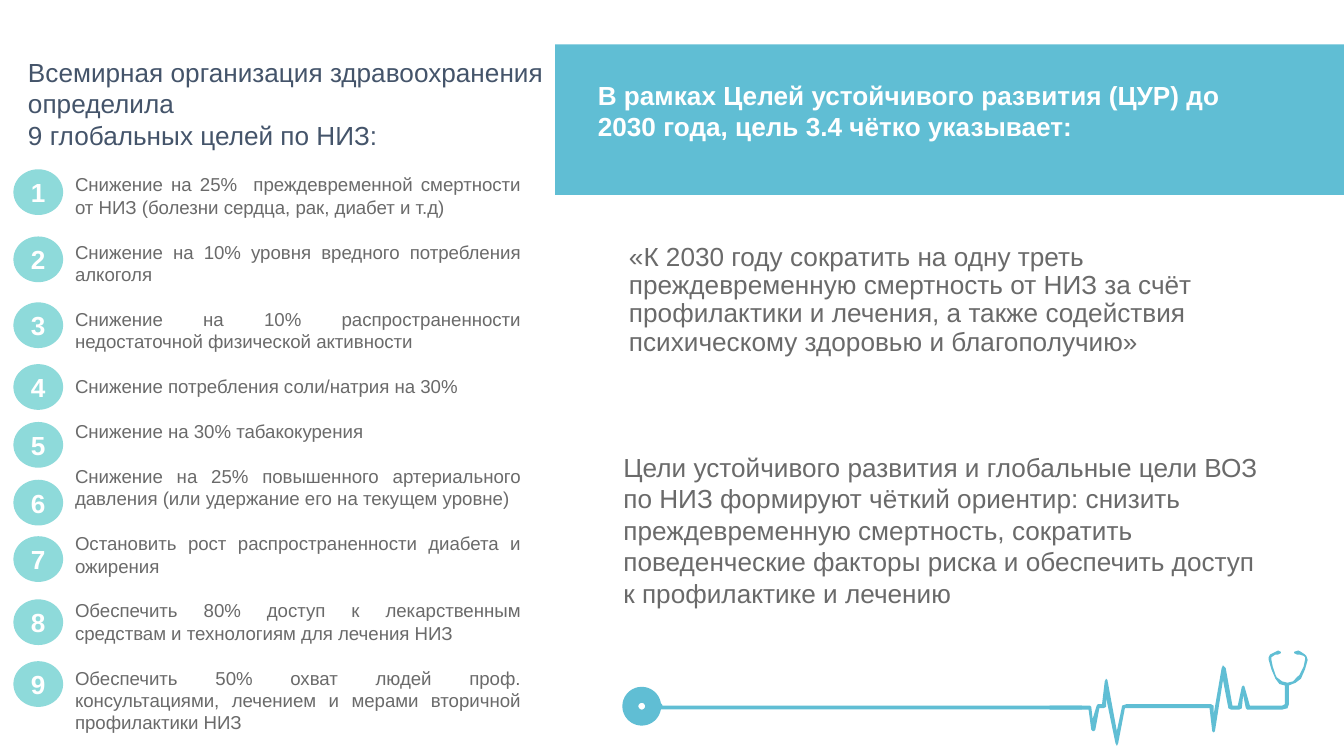
from pptx import Presentation
from pptx.dml.color import RGBColor
from pptx.enum.shapes import MSO_SHAPE
from pptx.enum.text import MSO_ANCHOR, MSO_AUTO_SIZE, PP_ALIGN
from pptx.util import Inches, Pt

RECT, ROUND, OVAL = MSO_SHAPE.RECTANGLE, MSO_SHAPE.ROUNDED_RECTANGLE, MSO_SHAPE.OVAL
LEFT, CENTER, JUSTIFY = PP_ALIGN.LEFT, PP_ALIGN.CENTER, PP_ALIGN.JUSTIFY
TOP, MIDDLE = MSO_ANCHOR.TOP, MSO_ANCHOR.MIDDLE
FIXED = MSO_AUTO_SIZE.NONE

PX = 9144  # EMU in one px, 100 px to the inch
FONT = "Arial"
COLORS = {
    "teal": "60BED4",
    "mint": "8EDADA",
    "navy": "44546A",
    "gray": "6A6A6A",
    "white": "FFFFFF",
}

HEADING = ["Всемирная организация здравоохранения определила",
           "9 глобальных целей по НИЗ:"]
GOALS = [
    "Снижение на 25%  преждевременной смертности от НИЗ (болезни сердца, рак, диабет и т.д)",
    "Снижение на 10% уровня вредного потребления алкоголя",
    "Снижение на 10% распространенности недостаточной физической активности",
    "Снижение потребления соли/натрия на 30%",
    "Снижение на 30% табакокурения",
    "Снижение на 25% повышенного артериального давления (или удержание его на текущем уровне)",
    "Остановить рост распространенности диабета и ожирения",
    "Обеспечить 80% доступ к лекарственным средствам и технологиям для лечения НИЗ",
    "Обеспечить 50% охват людей проф. консультациями, лечением и мерами вторичной "
    "профилактики НИЗ",
]
BADGE_TOPS = [0, 50, 99, 145, 188, 231, 273, 320, 366]
BANNER = "В рамках Целей устойчивого развития (ЦУР) до 2030 года, цель 3.4 чётко указывает:"
QUOTE = ("«К 2030 году сократить на одну треть преждевременную смертность от НИЗ за счёт "
         "профилактики и лечения, а также содействия психическому здоровью и благополучию»")
SUMMARY = ("Цели устойчивого развития и глобальные цели ВОЗ по НИЗ формируют чёткий ориентир: "
           "снизить преждевременную смертность, сократить поведенческие факторы риска "
           "и обеспечить доступ к профилактике и лечению")

# Outline of the pulse line, relative to its own box
EARS = [
    (192, 7), (191, 4), (190, 3), (187, 1), (185, 0), (182, 1), (182, 2), (184, 3),
    (186, 3), (189, 4), (190, 5), (190, 7), (189, 12), (186, 18), (184, 20), (181, 23),
    (177, 24), (173, 23), (169, 20), (168, 18), (166, 12), (165, 7), (165, 5), (168, 3),
    (170, 3), (172, 2), (172, 1), (170, 0), (168, 1), (164, 3), (163, 5), (163, 7),
    (165, 14), (168, 21), (171, 25), (175, 26),
]
UPPER = [
    (175, 37), (175, 40), (173, 41), (149, 41), (145, 27), (144, 26), (143, 27),
    (140, 41), (136, 41), (131, 13), (129, 11), (128, 13), (122, 48), (122, 41),
    (120, 40), (57, 40), (54, 41), (50, 60), (43, 22), (42, 21), (41, 23), (39, 40),
    (36, 40), (35, 41), (32, 51), (31, 42), (30, 41), (0, 41),
]
LOWER = [
    (0, 44), (29, 44), (31, 59), (32, 60), (33, 60), (34, 59), (37, 43), (40, 43),
    (42, 42), (42, 35), (49, 69), (50, 71), (51, 69), (56, 43), (119, 43), (121, 60),
    (122, 61), (123, 60), (129, 22), (133, 43), (135, 44), (141, 44), (143, 43),
    (144, 33), (146, 43), (147, 44), (173, 44), (177, 43), (178, 40), (178, 26),
    (183, 24), (187, 21), (190, 14),
]


def emu(*box):
    return [n * PX for n in box]


def rgb(name):
    return RGBColor.from_string(COLORS[name])


def paint(shape, color):
    """Flat fill without line or shadow."""
    shape.shadow.inherit = False
    shape.fill.solid()
    shape.fill.fore_color.rgb = rgb(color)
    shape.line.fill.background()


def block(slide, kind, box, color):
    shape = slide.shapes.add_shape(kind, *emu(*box))
    paint(shape, color)
    return shape


def write(shape, lines, color, size=14, bold=False, align=LEFT, anchor=TOP,
          inset=(10, 5, 10, 5), gap=0, pitch=1.0):
    """Fill a shape with paragraphs; inset runs left, top, right, bottom."""
    frame = shape.text_frame
    frame.word_wrap = True
    frame.auto_size = FIXED
    frame.vertical_anchor = anchor
    (frame.margin_left, frame.margin_top,
     frame.margin_right, frame.margin_bottom) = emu(*inset)
    for i, line in enumerate(lines):
        para = frame.paragraphs[0] if i == 0 else frame.add_paragraph()
        para.alignment = align
        para.line_spacing = pitch
        para.space_before = Pt(0)
        para.space_after = Pt(gap)
        run = para.add_run()
        run.text = line
        run.font.name = FONT
        run.font.size = Pt(size)
        run.font.bold = bold
        run.font.color.rgb = rgb(color)


def label(slide, box, lines, color, **style):
    write(slide.shapes.add_textbox(*emu(*box)), lines, color, **style)


def banner(slide, x, y, w, h):
    block(slide, RECT, (x, y, w, h), "teal")
    label(slide, (x + 22, y + 21, 500, 81), [BANNER], "white", bold=True)


def pulse(slide, x, y):
    """Stethoscope whose tube turns into a heartbeat."""
    start, *rest = EARS + UPPER + LOWER
    pen = slide.shapes.build_freeform(*start, scale=PX)
    pen.add_line_segments(rest, close=True)
    paint(pen.convert_to_shape(*emu(x + 314, y)), "teal")

    disc = slide.shapes.add_shape(OVAL, *emu(x + 2, y + 33, 17, 17))
    disc.shadow.inherit = False
    disc.fill.background()
    disc.line.color.rgb = rgb("teal")
    disc.line.width = Pt(8.57)

    stem = block(slide, ROUND, (x + 18, y + 39, 8, 5), "teal")
    stem.adjustments[0] = 0.5
    block(slide, RECT, (x + 15, y + 41, 323, 3), "teal")


def goals(slide, x, y):
    label(slide, (x, y, 428, 81), HEADING, "navy")
    label(slide, (x + 35, y + 87, 351, 448), GOALS, "gray",
          size=10, align=JUSTIFY, gap=12)
    for i, top in enumerate(BADGE_TOPS, 1):
        badge = block(slide, OVAL, (x - 1, y + 89 + top, 37, 34), "mint")
        write(badge, [str(i)], "white", bold=True, align=CENTER,
              anchor=MIDDLE, inset=(7, 4, 7, 4))


def quote(slide, x, y, w, h):
    title = slide.shapes.title
    title.left, title.top, title.width, title.height = emu(x, y, w, h)
    write(title, [QUOTE], "gray", anchor=MIDDLE, inset=(7, 4, 7, 27), pitch=0.9)


def main():
    deck = Presentation()
    deck.slide_width, deck.slide_height = Inches(10), Inches(5.625)  # 16:9
    slide = deck.slides.add_slide(deck.slide_layouts[5])
    banner(slide, 413, 33, 587, 112)
    pulse(slide, 467, 484)
    goals(slide, 11, 37)
    quote(slide, 461, 138, 520, 194)
    label(slide, (454, 331, 500, 128), [SUMMARY], "gray")
    deck.save("out.pptx")


if __name__ == "__main__":
    main()
